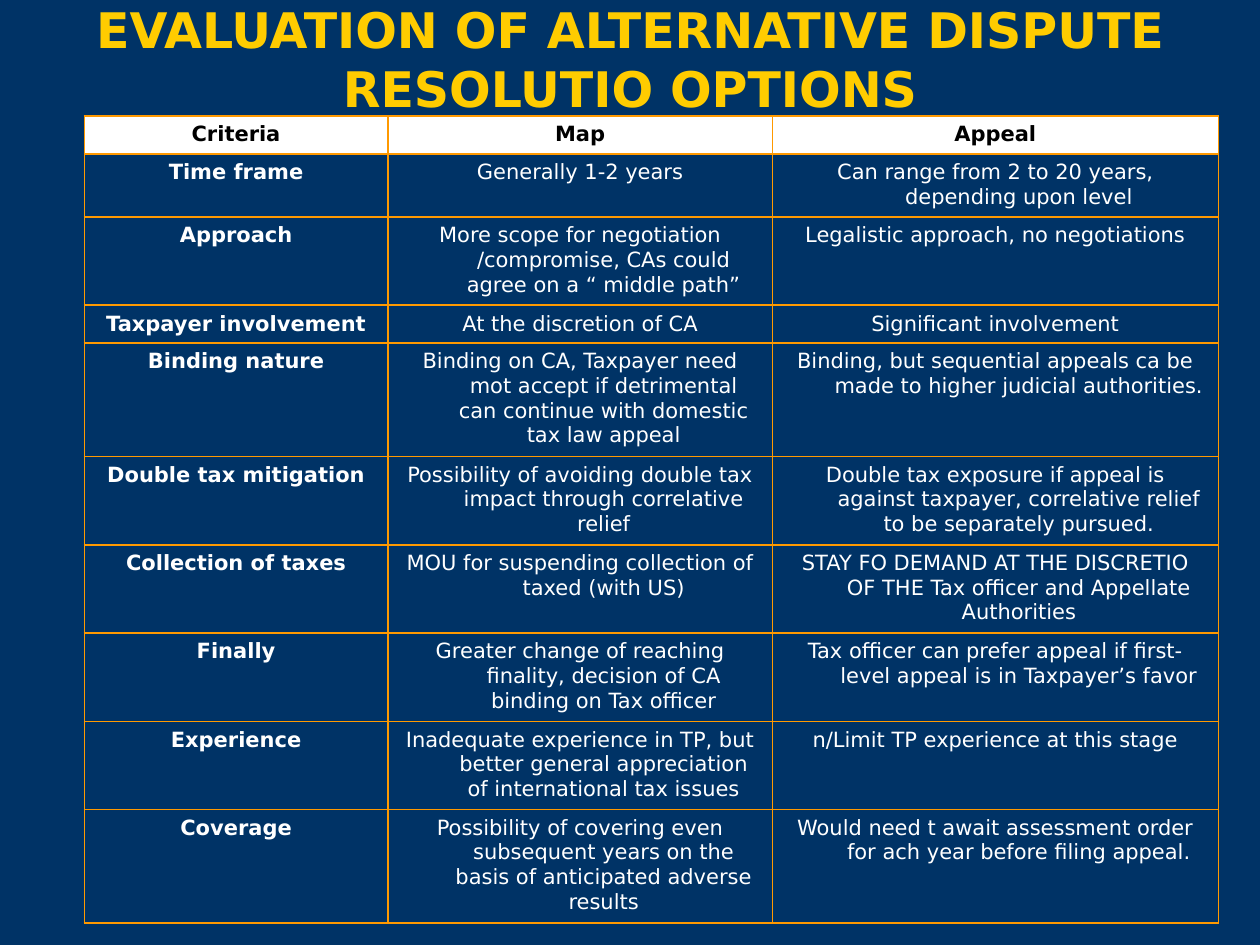
from lxml import etree
from pptx import Presentation
from pptx import util as u
from pptx.dml.color import RGBColor
from pptx.enum import text
from pptx.oxml import ns

NAVY = RGBColor(0x00, 0x33, 0x66)
GOLD = RGBColor(0xFF, 0xCC, 0x00)
ORANGE = RGBColor(0xFF, 0x99, 0x00)
WHITE = RGBColor(0xFF, 0xFF, 0xFF)
BLACK = RGBColor(0x00, 0x00, 0x00)
FONT = "DejaVu Sans"

TITLE = "EVALUATION OF ALTERNATIVE DISPUTE RESOLUTIO OPTIONS"
# Lines of text in the tallest cell, then criteria, map, appeal
ROWS = [
    (1, "Criteria", "Map", "Appeal"),
    (2, "Time frame", "Generally 1-2 years",
     "Can range from 2 to 20 years, depending upon level"),
    (3, "Approach",
     "More scope for negotiation /compromise, CAs could agree on a “ middle path”",
     "Legalistic approach, no negotiations"),
    (1, "Taxpayer involvement", "At the discretion of CA",
     "Significant involvement"),
    (4, "Binding nature",
     "Binding on CA, Taxpayer need mot accept if detrimental can continue "
     "with domestic tax law appeal",
     "Binding, but sequential appeals ca be made to higher judicial authorities."),
    (3, "Double tax mitigation",
     "Possibility of avoiding double tax impact through correlative relief",
     "Double tax exposure if appeal is against taxpayer, correlative relief "
     "to be separately pursued."),
    (3, "Collection of taxes", "MOU for suspending collection of taxed (with US)",
     "STAY FO DEMAND AT THE DISCRETIO OF THE Tax officer and Appellate Authorities"),
    (3, "Finally",
     "Greater change of reaching finality, decision of CA binding on Tax officer",
     "Tax officer can prefer appeal if first-level appeal is in Taxpayer’s favor"),
    (3, "Experience",
     "Inadequate experience in TP, but better general appreciation of "
     "international tax issues",
     "n/Limit TP experience at this stage"),
    (4, "Coverage",
     "Possibility of covering even subsequent years on the basis of "
     "anticipated adverse results",
     "Would need t await assessment order for ach year before filing appeal."),
]
WIDTHS = [u.Cm(6.12), u.Cm(7.75), u.Cm(8.99)]
LINE, PAD = 0.495, 0.25
INDENT = u.Cm(0.95)


def style(par, size, color, bold):
    par.alignment = text.PP_ALIGN.CENTER
    for run in par.runs:
        font = run.font
        font.name, font.size, font.bold = FONT, u.Pt(size), bold
        font.color.rgb = color


def border(cell):
    """Draw an orange line on all four sides; call before setting the fill."""
    props = cell._tc.get_or_add_tcPr()
    for side in ("a:lnL", "a:lnR", "a:lnT", "a:lnB"):
        line = etree.SubElement(props, ns.qn(side), w=str(u.Pt(1)))
        solid = etree.SubElement(line, ns.qn("a:solidFill"))
        etree.SubElement(solid, ns.qn("a:srgbClr"), val=str(ORANGE))


def add_title(slide):
    box = slide.shapes.add_textbox(u.Cm(1.27), 0, u.Cm(22.86), u.Cm(2.34))
    frame = box.text_frame
    frame.word_wrap = True
    frame.vertical_anchor = text.MSO_ANCHOR.MIDDLE
    frame.text = TITLE
    style(frame.paragraphs[0], 28, GOLD, True)


def add_grid(slide):
    heights = [u.Cm(PAD + LINE * row[0]) for row in ROWS]
    grid = slide.shapes.add_table(len(ROWS), len(WIDTHS), u.Cm(1.7), u.Cm(2.34),
                                  sum(WIDTHS), sum(heights)).table
    for col, width in zip(grid.columns, WIDTHS):
        col.width = width
    for r, (_, *words) in enumerate(ROWS):
        grid.rows[r].height = heights[r]
        head = r == 0
        for c, word in enumerate(words):
            cell = grid.cell(r, c)
            border(cell)
            cell.fill.solid()
            cell.fill.fore_color.rgb = WHITE if head else NAVY
            cell.text_frame.text = word
            par = cell.text_frame.paragraphs[0]
            style(par, 12, BLACK if head else WHITE, head or c == 0)
            props = par._p.get_or_add_pPr()
            props.set("marL", str(INDENT))
            props.set("indent", str(-INDENT))


def main():
    deck = Presentation()
    deck.slide_width, deck.slide_height = u.Cm(25.4), u.Cm(19.05)
    slide = deck.slides.add_slide(deck.slide_layouts[6])
    slide.background.fill.solid()
    slide.background.fill.fore_color.rgb = NAVY
    add_title(slide)
    add_grid(slide)
    deck.save("out.pptx")


if __name__ == "__main__":
    main()
